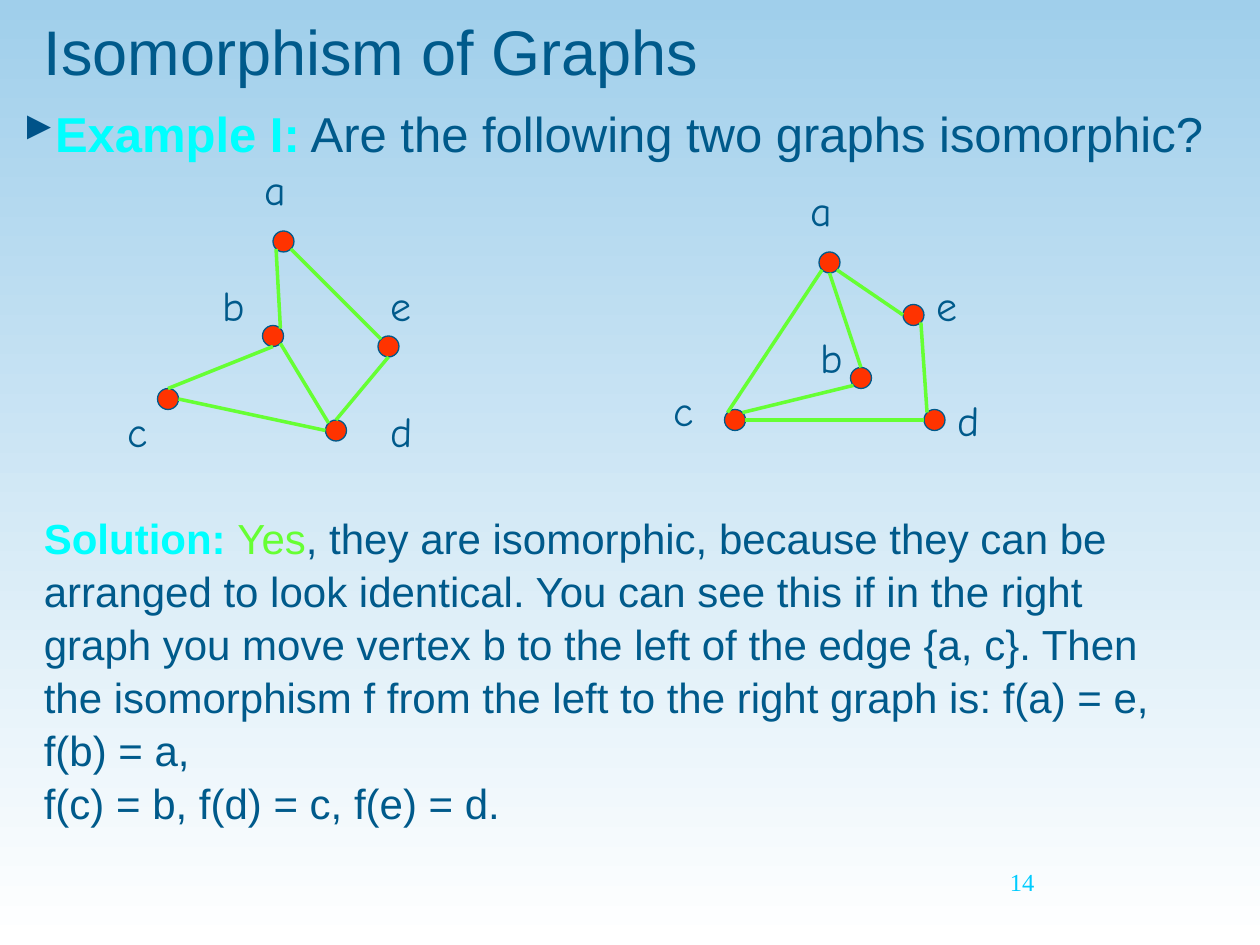
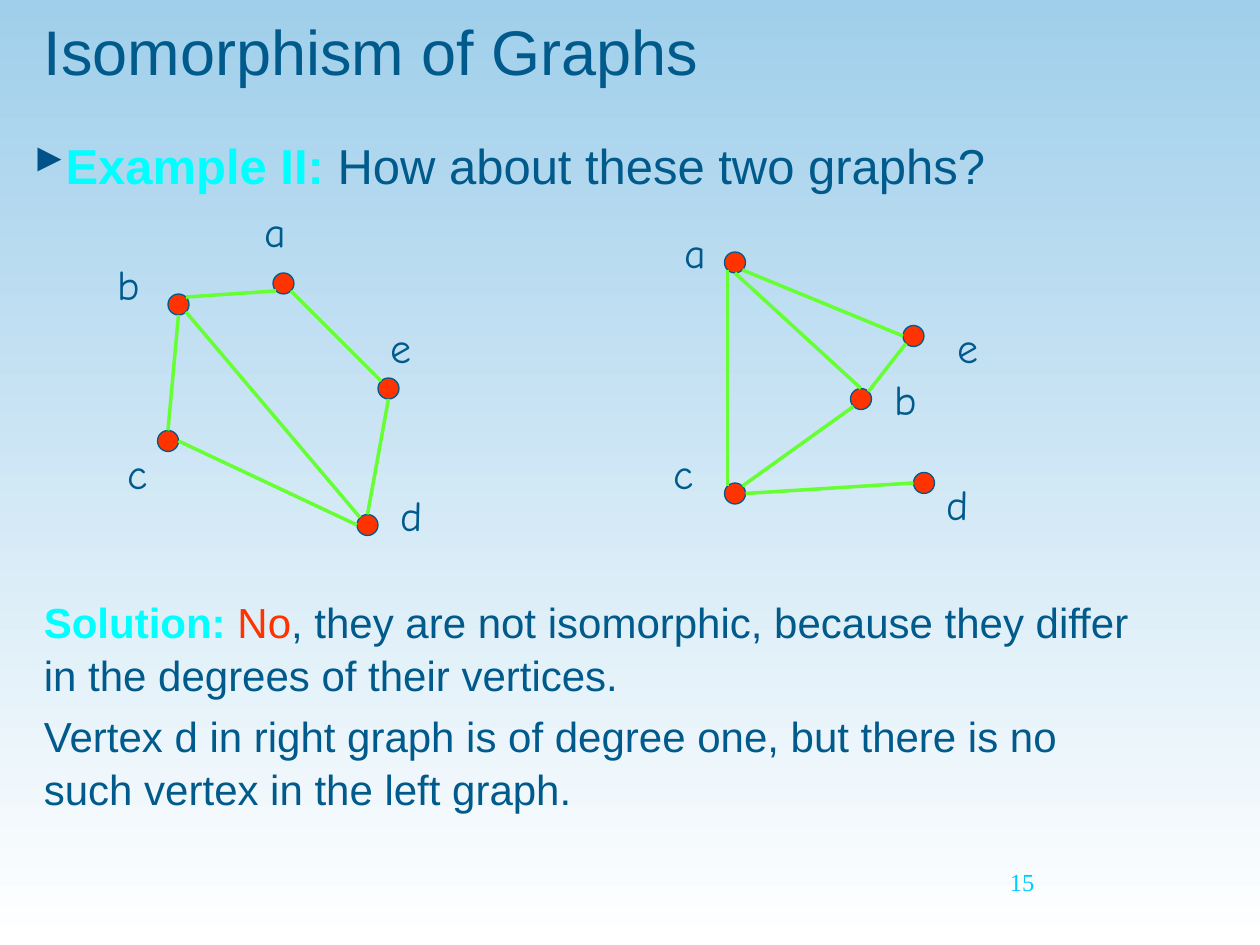
import math

import lxml.etree
import pptx
import pptx.dml.color
import pptx.enum.shapes
import pptx.oxml.ns
import pptx.util

RGB = pptx.dml.color.RGBColor
SKY = RGB(0xA0, 0xCF, 0xEB)
WHITE = RGB(0xFF, 0xFF, 0xFF)
NAVY = RGB(0x00, 0x5A, 0x8B)
BULLET = RGB(0x00, 0x53, 0x89)
CYAN = RGB(0x00, 0xFF, 0xFF)
PAGE_BLUE = RGB(0x00, 0xCC, 0xFF)
GREEN = RGB(0x66, 0xFF, 0x33)
RED = RGB(0xFF, 0x33, 0x00)

# The slide is a grid of 120 columns by 90 rows, 12 cells to the inch
CELL = pptx.util.Inches(1) // 12
COLUMNS, ROWS = 120, 90
RADIUS = 1
LABEL_WIDTHS = {"a": 8, "b": 4, "c": 5, "d": 8, "e": 8}
LABEL_HEIGHT = 6.8
BREAK = None

# Compass points on a vertex's rim, as unit vectors
DIAGONAL = math.sqrt(0.5)
RIM = {
    "N": (0, -1), "S": (0, 1), "W": (-1, 0), "E": (1, 0),
    "NW": (-DIAGONAL, -DIAGONAL), "NE": (DIAGONAL, -DIAGONAL),
    "SW": (-DIAGONAL, DIAGONAL), "SE": (DIAGONAL, DIAGONAL),
}


def cells(*counts):
    return [round(count * CELL) for count in counts]


class Lesson:
    """Holds the presentation, its style and the current slide."""

    def __init__(self):
        self.deck = pptx.Presentation()
        self.deck.slide_width, self.deck.slide_height = cells(COLUMNS, ROWS)

    def new_slide(self):
        self.slide = self.deck.slides.add_slide(self.deck.slide_layouts[6])
        fill = self.slide.background.fill
        fill.gradient()
        fill.gradient_angle = 270
        for stop, color in zip(fill.gradient_stops, (SKY, WHITE)):
            stop.color.rgb = color

    def text(self, area, paragraphs, size, font="Arial", shapes=None,
             spacing=None, after=0):
        """Each paragraph is a list of (words, colour, bold) or BREAK."""
        box = (shapes or self.slide.shapes).add_textbox(*cells(*area))
        frame = box.text_frame
        frame.word_wrap = True
        for index, pieces in enumerate(paragraphs):
            paragraph = frame.add_paragraph() if index else frame.paragraphs[0]
            paragraph.line_spacing = spacing
            paragraph.space_after = pptx.util.Pt(after)
            for piece in pieces:
                if piece is BREAK:
                    paragraph.add_line_break()
                    continue
                run = paragraph.add_run()
                run.text, run.font.color.rgb, run.font.bold = piece
                run.font.size = pptx.util.Pt(size)
                run.font.name = font
        return frame

    def title(self, words, height):
        frame = self.text((3, 0, 113, height), [[(words, NAVY, False)]], 36)
        frame.margin_top = pptx.util.Inches(0.1)

    def question(self, area, name, words):
        pieces = [(name, CYAN, True), (words, NAVY, False)]
        frame = self.text(area, [pieces], 28, spacing=1.05)
        properties = frame.paragraphs[0]._p.get_or_add_pPr()
        properties.set("marL", "0")
        properties.set("indent", "0")
        qn = pptx.oxml.ns.qn
        color = lxml.etree.SubElement(properties, qn("a:buClr"))
        lxml.etree.SubElement(color, qn("a:srgbClr")).set("val", str(BULLET))
        lxml.etree.SubElement(properties, qn("a:buChar")).set("char", "▸")

    def solution(self, top, height, verdict, color, reason, *more):
        opening = [("Solution: ", CYAN, True), (verdict, color, False)]
        paragraphs = [opening + reason, *more]
        self.text((3, top, 108, height), paragraphs, 24,
                  spacing=1.05, after=4.8)

    def page_number(self, number):
        self.text((95, 82, 25, 6), [[(str(number), PAGE_BLUE, False)]], 14,
                  font="Times New Roman")

    def vertex(self, shapes, center):
        x, y = center
        dot = shapes.add_shape(
            pptx.enum.shapes.MSO_SHAPE.FLOWCHART_CONNECTOR,
            *cells(x - RADIUS, y - RADIUS, 2 * RADIUS, 2 * RADIUS))
        dot.shadow.inherit = False
        dot.fill.solid()
        dot.fill.fore_color.rgb = RED
        dot.line.color.rgb = NAVY
        dot.line.width = pptx.util.Pt(0.75)

    def edge(self, shapes, *ends):
        points = []
        for (x, y), side in ends:
            dx, dy = RIM[side]
            points += cells(x + RADIUS * dx, y + RADIUS * dy)
        line = shapes.add_connector(
            pptx.enum.shapes.MSO_CONNECTOR.STRAIGHT, *points)
        line.line.color.rgb = GREEN
        line.line.width = pptx.util.Pt(2)
        lxml.etree.SubElement(line._element.spPr,
                              pptx.oxml.ns.qn("a:effectLst"))

    def graph(self, vertices, labels, edges):
        """Edges read like "aSE-eNW": vertex and rim point at each end."""
        shapes = self.slide.shapes.add_group_shape().shapes
        for center in vertices.values():
            self.vertex(shapes, center)
        for name, (left, top) in labels.items():
            area = (left, top, LABEL_WIDTHS[name], LABEL_HEIGHT)
            self.text(area, [[(name, NAVY, False)]], 24, "Comic Neue", shapes)
        for edge in edges.split():
            self.edge(shapes, *((vertices[end[0]], end[1:])
                                for end in edge.split("-")))


def main():
    lesson = Lesson()

    # Example I: an isomorphic pair
    lesson.new_slide()
    lesson.title("Isomorphism of Graphs", 9)
    lesson.question((1, 9, 119, 7), "Example I:",
                    " Are the following two graphs isomorphic?")
    lesson.page_number(14)
    lesson.graph(
        {"a": (27, 23), "b": (26, 32), "c": (16, 38), "d": (32, 41),
         "e": (37, 33)},
        {"a": (24, 15), "b": (20, 26), "c": (11, 38), "d": (36, 38),
         "e": (36, 26)},
        "dN-eS dW-cE cN-bS bNE-aSW aSE-eNW bSE-dNW")
    lesson.graph(
        {"a": (79, 25), "b": (82, 36), "c": (70, 40), "d": (89, 40),
         "e": (87, 30)},
        {"a": (76, 17), "b": (77, 31), "c": (63, 36), "d": (90, 37),
         "e": (88, 26)},
        "cE-dW cNE-bSW bN-aS aSE-eW eSE-dNW aSW-cNW")
    lesson.solution(
        48, 36, "Yes", GREEN,
        [(", they are isomorphic, because they can be arranged to look "
          "identical. You can see this if in the right graph you move vertex "
          "b to the left of the edge {a, c}. Then the isomorphism f from the "
          "left to the right graph is: f(a) = e, f(b) = a, ", NAVY, False),
         BREAK,
         ("f(c) = b, f(d) = c, f(e) = d.", NAVY, False)])

    # Example II: a pair that is not isomorphic
    lesson.new_slide()
    lesson.title("Isomorphism of Graphs", 13)
    lesson.question((2, 12, 116, 7), "Example II:",
                    " How about these two graphs?")
    lesson.page_number(15)
    lesson.graph(
        {"a": (27, 27), "b": (17, 29), "c": (16, 42), "d": (35, 50),
         "e": (37, 37)},
        {"a": (24, 19), "b": (10, 24), "c": (11, 42), "d": (37, 46),
         "e": (36, 30)},
        "dN-eS dW-cE cN-bS bNE-aSW aSE-eNW bSE-dNW")
    lesson.graph(
        {"a": (70, 25), "b": (82, 38), "c": (70, 47), "d": (88, 46),
         "e": (87, 32)},
        {"a": (64, 21), "b": (84, 35), "c": (63, 42), "d": (89, 45),
         "e": (90, 30)},
        "cE-dW cNE-bSW bN-aS aSE-eW eSW-bNE aSW-cNW")
    lesson.solution(
        56, 27, "No", RED,
        [(", they are not isomorphic, because they differ in the degrees of "
          "their vertices.", NAVY, False)],
        [("Vertex d in right graph is of degree one, but there is no such "
          "vertex in the left graph.", NAVY, False)])

    lesson.deck.save("out.pptx")


if __name__ == "__main__":
    main()
